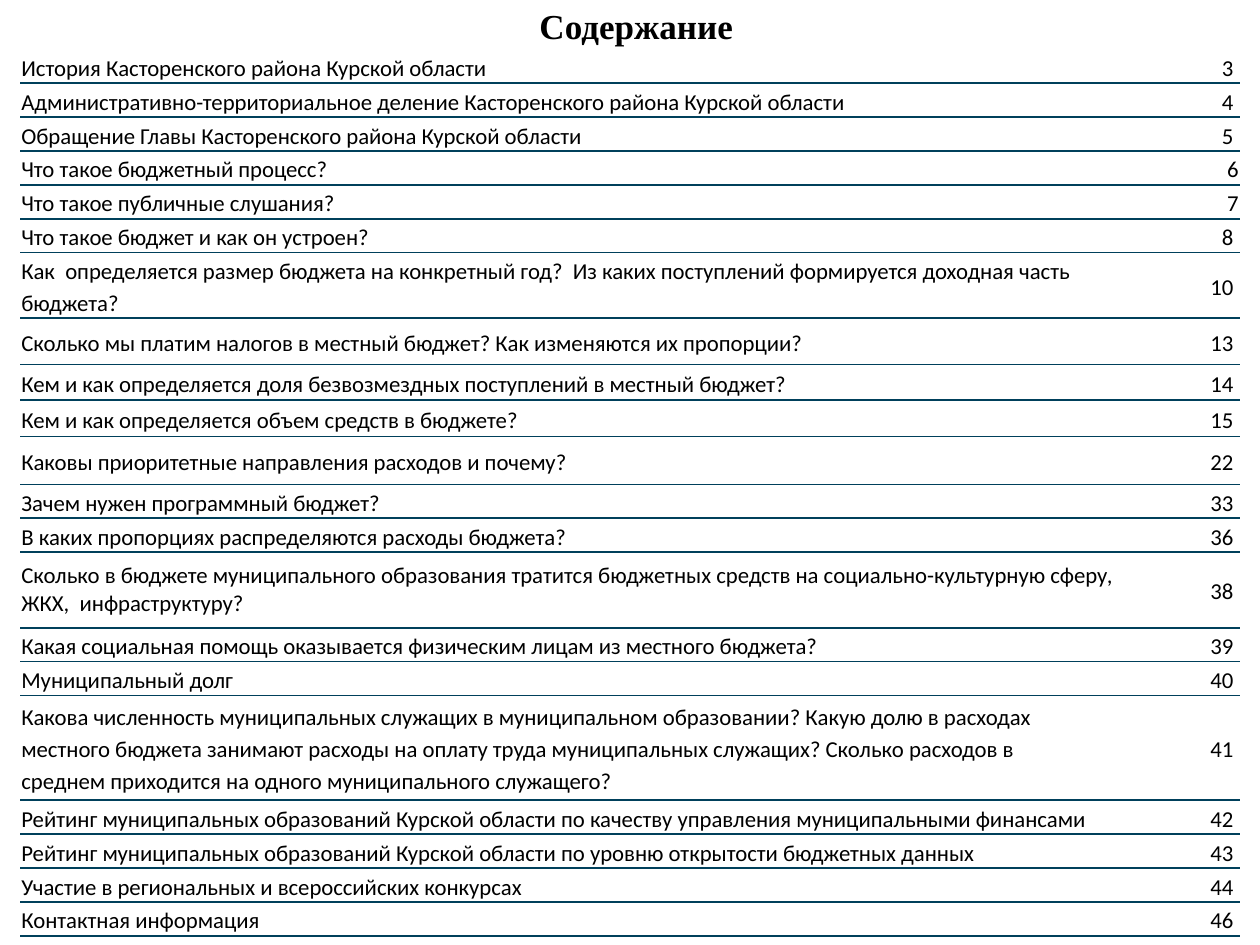
from lxml.etree import SubElement
from pptx import Presentation
from pptx.dml.color import RGBColor
from pptx.enum.text import MSO_ANCHOR, PP_ALIGN
from pptx.oxml import parse_xml
from pptx.oxml.ns import nsdecls, qn
from pptx.util import Inches, Pt

COLORS = {"text": "000000", "rule": "00405B"}
NO_STYLE = "{2D5ABB26-0587-4C30-8999-92F81FD0307C}"
PADDING = Inches(0.01)
PAGE_WIDTH = 0.57

# Row height in inches, paragraphs of the entry, page number, line spacing
CONTENTS = [
    (0.22, ["История Касторенского района Курской области"], "3 ", 1.15),
    (0.22, ["Административно-территориальное деление Касторенского района Курской области"], "4 ", 1.15),
    (0.22, ["Обращение Главы Касторенского района Курской области"], "5 ", 1.15),
    (0.22, ["Что такое бюджетный процесс?"], "6", 1.15),
    (0.22, ["Что такое публичные слушания?"], "7", 1.15),
    (0.22, ["Что такое бюджет и как он устроен?"], "8 ", 1.15),
    (0.42, ["Как  определяется размер бюджета на конкретный год?  "
            "Из каких поступлений формируется доходная часть бюджета?"], "10 ", 1.15),
    (0.37, ["Сколько мы платим налогов в местный бюджет? Как изменяются их пропорции?"], "13 ", 1.15),
    (0.28, ["Кем и как определяется доля безвозмездных поступлений в местный бюджет?"], "14 ", 1.15),
    (0.29, ["Кем и как определяется объем средств в бюджете?"], "15 ", 1.15),
    (0.38, ["Каковы приоритетные направления расходов и почему?"], "22 ", 1.15),
    (0.22, ["Зачем нужен программный бюджет?"], "33 ", 1.15),
    (0.22, ["В каких пропорциях распределяются расходы бюджета?"], "36 ", 1.15),
    (0.6, ["Сколько в бюджете муниципального образования тратится бюджетных средств "
           "на социально-культурную сферу,",
           "ЖКХ,  инфраструктуру?"], "38 ", 1.0),
    (0.22, ["Какая социальная помощь оказывается физическим лицам из местного бюджета?"], "39 ", 1.15),
    (0.26, ["Муниципальный долг"], "40 ", 1.15),
    (0.83, ["Какова численность муниципальных служащих в муниципальном образовании? "
            "Какую долю в расходах",
            "местного бюджета занимают расходы на оплату труда муниципальных служащих? "
            "Сколько расходов в",
            "среднем приходится на одного муниципального служащего?"], "41 ", 1.15),
    (0.26, ["Рейтинг муниципальных образований Курской области по качеству "
            "управления муниципальными финансами"], "42 ", 1.15),
    (0.22, ["Рейтинг муниципальных образований Курской области по уровню "
            "открытости бюджетных данных"], "43 ", 1.15),
    (0.22, ["Участие в региональных и всероссийских конкурсах"], "44 ", 1.15),
    (0.22, ["Контактная информация"], "46 ", 1.15),
]


def add_run(paragraph, text, font_name, size, bold=False):
    run = paragraph.add_run()
    run.text = text
    run.font.name = font_name
    run.font.size = Pt(size)
    run.font.bold = bold
    run.font.color.rgb = RGBColor.from_string(COLORS["text"])


def add_title(slide, left, top, width, height):
    frame = slide.shapes.add_textbox(
        Inches(left), Inches(top), Inches(width), Inches(height)).text_frame
    frame.word_wrap = True
    frame.vertical_anchor = MSO_ANCHOR.MIDDLE
    heading = frame.paragraphs[0]
    heading.alignment = PP_ALIGN.CENTER
    add_run(heading, "Содержание", "Times New Roman", 20, bold=True)


def underline_cell(cell):
    cell.fill.background()
    rule = parse_xml(f'<a:lnB {nsdecls("a")} w="{Pt(1)}"/>')
    fill = SubElement(rule, qn("a:solidFill"))
    SubElement(fill, qn("a:srgbClr")).set("val", COLORS["rule"])
    cell._tc.get_or_add_tcPr().insert(0, rule)


def fill_cell(cell, lines, alignment, line_spacing):
    cell.margin_left = cell.margin_right = PADDING
    cell.margin_top = cell.margin_bottom = PADDING
    cell.vertical_anchor = MSO_ANCHOR.MIDDLE
    frame = cell.text_frame
    for index, line in enumerate(lines):
        paragraph = frame.add_paragraph() if index else frame.paragraphs[0]
        paragraph.alignment = alignment
        paragraph.line_spacing = line_spacing
        paragraph.space_after = Pt(10 if len(lines) == 1 else 0)
        add_run(paragraph, line, "Calibri", 13)
    underline_cell(cell)


def add_contents(slide, left, top, width, height):
    table = slide.shapes.add_table(
        len(CONTENTS), 2, Inches(left), Inches(top), Inches(width), Inches(height)).table
    table.first_row = table.horz_banding = False
    table._tbl.tblPr.find(qn("a:tableStyleId")).text = NO_STYLE
    table.columns[0].width = Inches(width - PAGE_WIDTH)
    table.columns[1].width = Inches(PAGE_WIDTH)
    for index, (row_height, lines, page, line_spacing) in enumerate(CONTENTS):
        table.rows[index].height = Inches(row_height)
        fill_cell(table.cell(index, 0), lines, PP_ALIGN.LEFT, line_spacing)
        fill_cell(table.cell(index, 1), [page], PP_ALIGN.RIGHT, 1.15)


def main():
    prs = Presentation()
    prs.slide_width, prs.slide_height = Inches(10), Inches(7.5)
    slide = prs.slides.add_slide(prs.slide_layouts[6])
    add_title(slide, 0.55, 0, 9, 0.4)
    add_contents(slide, 0.16, 0.39, 9.68, 6.96)
    prs.save("out.pptx")


if __name__ == "__main__":
    main()
